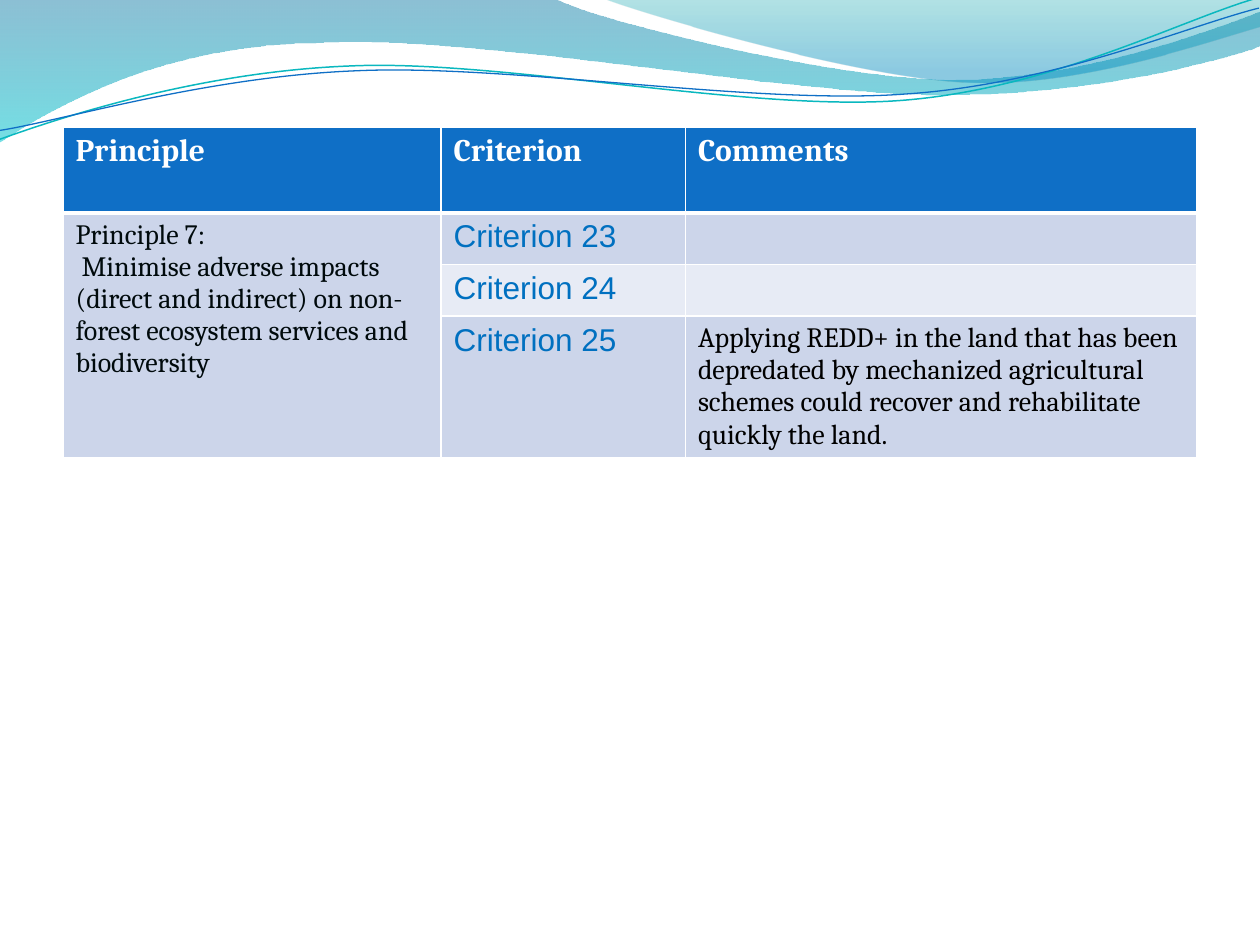
from pptx import Presentation
from pptx import util as u
from pptx.dml.color import RGBColor
from pptx.oxml.ns import qn
from lxml import etree

WHITE = RGBColor(0xFF, 0xFF, 0xFF)
BLACK = RGBColor(0, 0, 0)
INK = RGBColor(0x00, 0x0A, 0x0C)
BLUE = RGBColor(0x0F, 0x6F, 0xC6)
LINK_BLUE = RGBColor(0x00, 0x70, 0xC0)
TEAL = RGBColor(0x0A, 0xB8, 0xBF)
BAND_DARK = RGBColor(0xCC, 0xD5, 0xEA)
BAND_LIGHT = RGBColor(0xE7, 0xEB, 0xF5)
DEEP_BLUE = RGBColor(0x00, 0x74, 0xA1)
CYAN = RGBColor(0x00, 0xC6, 0xCF)
SEA = RGBColor(0x00, 0xA1, 0xA9)
SKY = RGBColor(0x00, 0x8B, 0xBF)

BACK_WAVE = [
    (0, -0.01), (4.4, -0.01),
    (4.76, 0.17, 6.64, 0.63, 7.58, 0.63), (8.53, 0.63, 9.58, 0.26, 10, 0.09),
    (10.01, 0.36),
    (9.83, 0.44, 8.7, 0.76, 7.46, 0.75), (6.22, 0.75, 3.82, 0.28, 2.57, 0.34),
    (1.29, 0.35, 0.46, 0.83, -0.01, 1.13),
]
FRONT_WAVE = [
    (4.79, -0.01),
    (5.09, 0.11, 6.82, 0.62, 7.69, 0.65), (8.56, 0.69, 9.61, 0.32, 10, 0.21),
    (10, 0),
]
TEAL_CURVE = [
    (-0.02, 0.87), (0.47, 0.72, 1.58, 0.41, 2.78, 0.42),
    (3.96, 0.42, 5.91, 0.93, 7.12, 0.9), (8.32, 0.87, 9.4, 0.36, 10, 0.22),
]
BLUE_CURVE = [
    (-0.02, 0.8), (0.46, 0.75, 1.64, 0.45, 2.83, 0.46),
    (4.03, 0.46, 5.96, 0.88, 7.16, 0.85), (8.35, 0.83, 9.42, 0.42, 10.01, 0.3),
]


def add_outline(page, left, top, steps, close):
    """Add a freeform of straight (2 numbers) and cubic (6 numbers) steps."""
    points = [(left + u.Inches(x), top + u.Inches(y))
              for step in steps for x, y in zip(step[::2], step[1::2])]
    builder = page.shapes.build_freeform(*points[0])
    builder.add_line_segments(points[1:], close=close)
    shape = builder.convert_to_shape()
    shape.shadow.inherit = False
    segments = iter(list(shape._element.spPr.iter(qn("a:lnTo"))))
    for step in steps[1:]:
        first = next(segments)
        if len(step) == 6:
            first.tag = qn("a:cubicBezTo")
            for _ in range(2):
                control = next(segments)
                control.getparent().remove(control)
                first.append(control[0])
    return shape


def add_wave(page, left, top, steps, stops):
    """Add a closed wave with a translucent gradient running downward."""
    shape = add_outline(page, left, top, steps, True)
    shape.line.fill.background()
    shape.fill.gradient()
    shape.fill.gradient_angle = 270
    for stop, (position, color, _) in zip(shape.fill.gradient_stops, stops):
        stop.position = position
        stop.color.rgb = color
    colors = shape._element.spPr.find(qn("a:gradFill")).iter(qn("a:srgbClr"))
    for color, (_, _, opacity) in zip(colors, stops):
        etree.SubElement(color, qn("a:alpha"), val=str(opacity * 1000))


def add_curve(page, left, top, steps, color, width):
    """Add an open curved line, tilted slightly."""
    shape = add_outline(page, left, top, steps, False)
    shape.rotation = 357.3
    shape.fill.background()
    shape.line.color.rgb = color
    shape.line.width = u.Pt(width)


def add_header_art(page, left, top):
    """Draw the waves and curves along the upper edge."""
    add_wave(page, left, top, BACK_WAVE, [(0, DEEP_BLUE, 45), (1, CYAN, 55)])
    add_wave(page, left, top, FRONT_WAVE, [(0, SEA, 30), (0.8, SKY, 45)])
    add_curve(page, left, top, TEAL_CURVE, TEAL, 0.85)
    add_curve(page, left, top, BLUE_CURVE, BLUE, 0.75)


def set_borders(cell, top, bottom):
    """Give a cell white borders, with the top and bottom widths in points."""
    properties = cell._tc.get_or_add_tcPr()
    sides = (("L", 1), ("R", 1), ("T", top), ("B", bottom))
    for index, (side, width) in enumerate(sides):
        line = etree.Element(qn(f"a:ln{side}"), w=str(u.Pt(width)))
        fill = etree.SubElement(line, qn("a:solidFill"))
        etree.SubElement(fill, qn("a:srgbClr"), val=str(WHITE))
        properties.insert(index, line)


def write(cell, lines, size, font, color, bold=False):
    """Write one paragraph per line into a cell."""
    frame = cell.text_frame
    for index, line in enumerate(lines):
        para = frame.add_paragraph() if index else frame.paragraphs[0]
        span = para.add_run()
        span.text = line
        span.font.size = u.Pt(size)
        span.font.name = font
        span.font.bold = bold
        span.font.color.rgb = color


def add_criteria_table(page, left, top, width):
    """Add the table of principle, criteria and comments."""
    heights = (0.68, 0.41, 0.41, 1.12)
    fills = (BLUE, BAND_DARK, BAND_LIGHT, BAND_DARK)
    table = page.shapes.add_table(4, 3, left, top, width, u.Inches(sum(heights))).table
    for column, share in zip(table.columns, (3, 1.94, 4.06)):
        column.width = int(width * share / 9)
    for index, (row, height, fill) in enumerate(zip(table.rows, heights, fills)):
        row.height = u.Inches(height)
        for cell in row.cells:
            cell.fill.solid()
            cell.fill.fore_color.rgb = fill
            set_borders(cell, 3 if index == 1 else 1, 3 if index == 0 else 1)
    for column, title in enumerate(("Principle", "Criterion", "Comments")):
        write(table.cell(0, column), [title], 18, "Cambria", WHITE, True)
    for row in (1, 2, 3):
        write(table.cell(row, 1), [f"Criterion {22 + row}"], 18, "Arial", LINK_BLUE)
    table.cell(1, 0).merge(table.cell(3, 0))
    write(table.cell(1, 0), [
        "Principle 7:",
        " Minimise adverse impacts (direct and indirect) on non-forest "
        "ecosystem services and biodiversity",
    ], 16, "Cambria", INK)
    write(table.cell(3, 2), [
        "Applying REDD+ in the land that has been depredated by mechanized "
        "agricultural schemes could recover and rehabilitate quickly the land.",
    ], 16, "Cambria", BLACK)


def main():
    """Build the slide and save the deck."""
    deck = Presentation()
    deck.slide_width, deck.slide_height = u.Inches(10), u.Inches(7.5)
    page = deck.slides.add_slide(deck.slide_layouts[6])
    add_header_art(page, u.Inches(0), u.Inches(0))
    add_criteria_table(page, u.Inches(0.5), u.Inches(1.01), u.Inches(9))
    deck.save("out.pptx")


if __name__ == "__main__":
    main()
